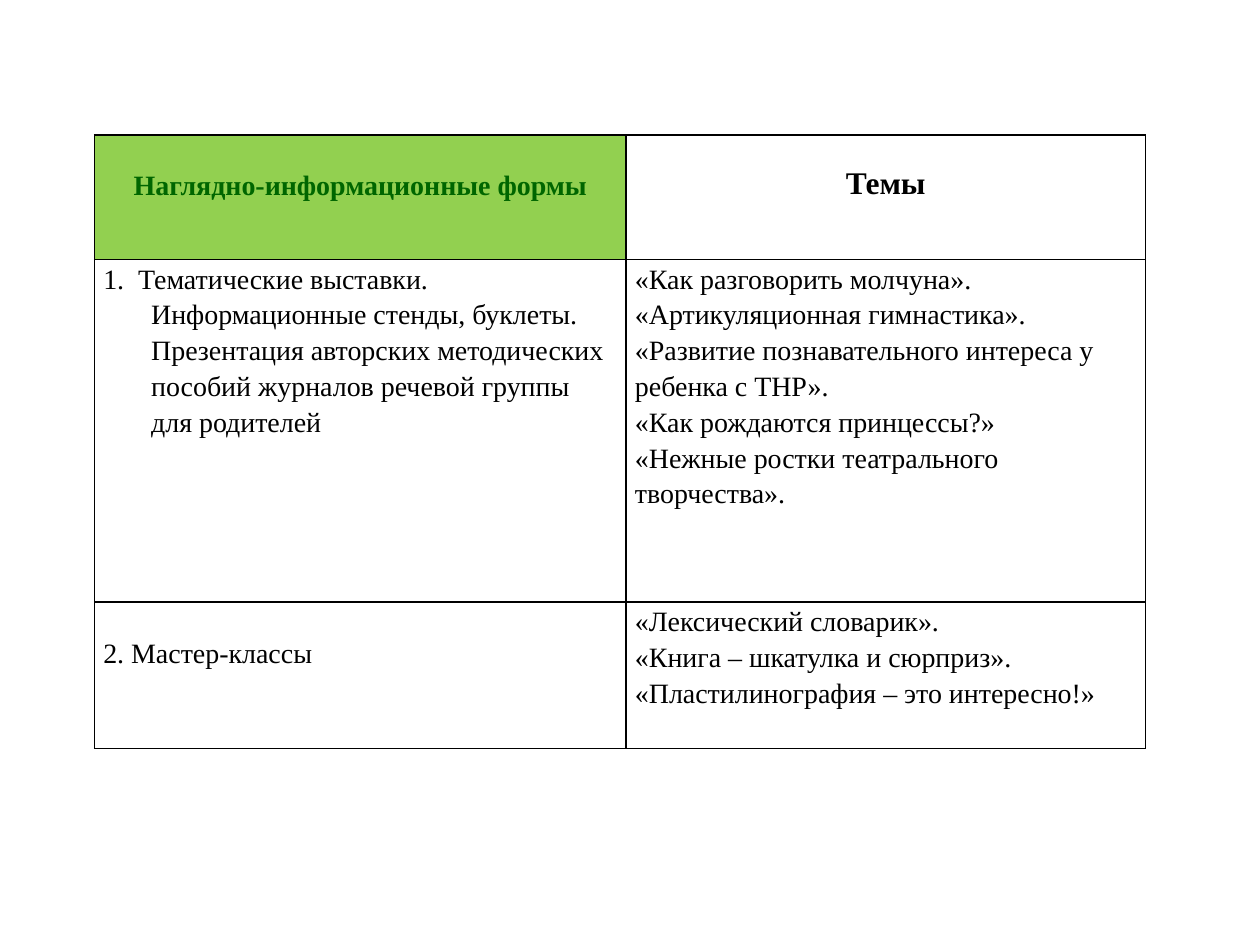
from lxml.etree import SubElement
from pptx import Presentation
from pptx.dml.color import RGBColor
from pptx.enum.text import PP_ALIGN
from pptx.oxml.ns import qn
from pptx.util import Inches, Pt

ROWS = [
    (["Наглядно-информационные формы"], ["Темы"]),
    (
        ["1.  Тематические выставки. Информационные стенды, буклеты. "
         "Презентация авторских методических пособий журналов речевой группы для родителей"],
        ["«Как разговорить молчуна». «Артикуляционная гимнастика». "
         "«Развитие познавательного интереса у ребенка с ТНР».",
         "«Как рождаются принцессы?»",
         "«Нежные ростки театрального творчества»."],
    ),
    (
        ["2. Мастер-классы"],
        ["«Лексический словарик».",
         "«Книга – шкатулка и сюрприз». «Пластилинография – это интересно!»"],
    ),
]
WIDE = [4.22, 4.12]
HIGH = [0.99, 2.72, 1.16]
LEFT, TOP = 0.75, 1.07
THEME = {
    "font": "Times New Roman", "ink": "000000", "green": "006600",
    "lime": "92D050", "body": 16, "head": 18, "line": 1,
}
BODY = {"size": THEME["body"], "bold": False, "ink": THEME["ink"]}
FORMS = {"size": THEME["body"], "bold": True, "ink": THEME["green"],
         "fill": THEME["lime"], "align": PP_ALIGN.CENTER, "top": 0.25}
TOPICS = {"size": THEME["head"], "bold": True, "ink": THEME["ink"],
          "align": PP_ALIGN.CENTER, "top": 0.21}
ITEM = {**BODY, "hang": 0.38}
LOOKS = [(FORMS, TOPICS), (ITEM, BODY), ({**ITEM, "top": 0.25}, BODY)]


def apply(target, values):
    for name, value in values.items():
        setattr(target, name, value)


def border(cell):
    props = cell._tc.get_or_add_tcPr()
    for side in ("lnL", "lnR", "lnT", "lnB"):
        line = SubElement(props, qn("a:" + side), w=str(Pt(THEME["line"])))
        fill = SubElement(line, qn("a:solidFill"))
        SubElement(fill, qn("a:srgbClr"), val=THEME["ink"])


def write(cell, lines, look):
    apply(cell, {
        "margin_left": Inches(0.07), "margin_right": Inches(0.07),
        "margin_top": Inches(look.get("top", 0)), "margin_bottom": 0,
    })
    border(cell)
    if "fill" in look:
        cell.fill.solid()
        cell.fill.fore_color.rgb = RGBColor.from_string(look["fill"])
    else:
        cell.fill.background()
    frame = cell.text_frame
    for index, text in enumerate(lines):
        para = frame.add_paragraph() if index else frame.paragraphs[0]
        apply(para, {"alignment": look.get("align", PP_ALIGN.LEFT), "line_spacing": 1.15})
        if "hang" in look:
            hang = Inches(look["hang"])
            props = para._p.get_or_add_pPr()
            props.set("marL", str(hang))
            props.set("indent", str(-hang))
        run = para.add_run()
        run.text = text
        apply(run.font, {"name": THEME["font"], "size": Pt(look["size"]), "bold": look["bold"]})
        run.font.color.rgb = RGBColor.from_string(look["ink"])


def main():
    deck = Presentation()
    apply(deck, {"slide_width": Inches(10), "slide_height": Inches(7.5)})
    slide = deck.slides.add_slide(deck.slide_layouts[6])
    box = [Inches(n) for n in (LEFT, TOP, sum(WIDE), sum(HIGH))]
    table = slide.shapes.add_table(len(ROWS), len(WIDE), *box).table
    apply(table, {"first_row": False, "horz_banding": False})
    for col, width in zip(table.columns, WIDE):
        col.width = Inches(width)
    for row, height, cells, looks in zip(table.rows, HIGH, ROWS, LOOKS):
        row.height = Inches(height)
        for cell, lines, look in zip(row.cells, cells, looks):
            write(cell, lines, look)
    deck.save("out.pptx")


if __name__ == "__main__":
    main()
